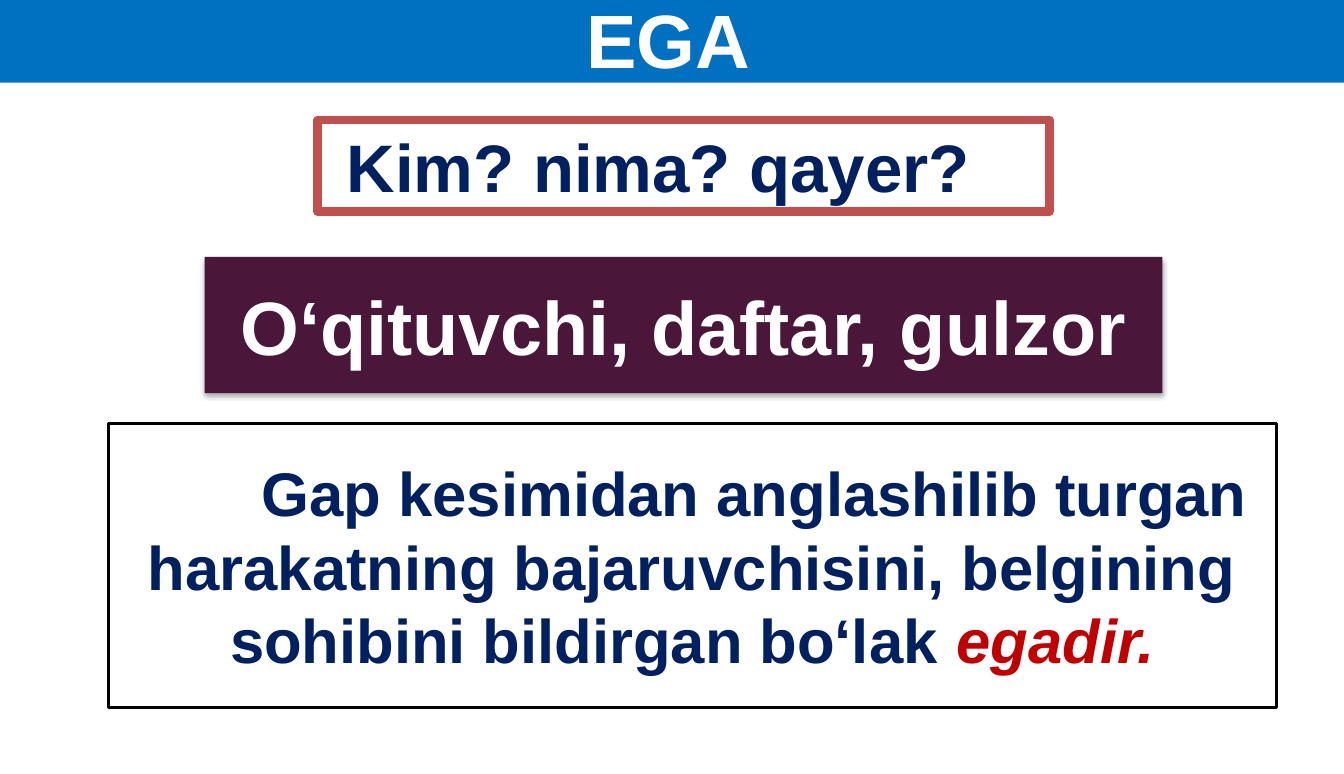
from dataclasses import dataclass

from lxml import etree
from pptx import Presentation
from pptx.dml.color import RGBColor
from pptx.enum.shapes import MSO_SHAPE
from pptx.enum.text import MSO_ANCHOR, MSO_AUTO_SIZE, PP_ALIGN
from pptx.oxml import parse_xml
from pptx.oxml.ns import nsdecls
from pptx.shapes.autoshape import Shape
from pptx.slide import Slide
from pptx.text.text import TextFrame
from pptx.util import Inches, Pt

RECTANGLE = MSO_SHAPE.RECTANGLE
TOP, MIDDLE = MSO_ANCHOR.TOP, MSO_ANCHOR.MIDDLE
LEFT, CENTER = PP_ALIGN.LEFT, PP_ALIGN.CENTER
NO_AUTOFIT = MSO_AUTO_SIZE.NONE

FONT = "Arial"
WHITE, BLACK, NAVY = "FFFFFF", "000000", "002060"
BLUE, BRICK, PLUM, RED = "0070C0", "C0504D", "4A1639", "C00000"


@dataclass(frozen=True)
class TextRun:
    text: str
    size: float
    color: str
    italic: bool = False


@dataclass(frozen=True)
class Panel:
    left: float
    top: float
    width: float
    height: float
    fill: str
    runs: tuple[TextRun, ...] = ()
    line: str | None = None
    line_width: float = 0
    anchor: MSO_ANCHOR = MIDDLE
    alignment: PP_ALIGN = CENTER
    indent: float = 0
    shadow: bool = False


BANNER = Panel(-0.02, -0.15, 13.35, 0.97, BLUE)
TITLE_RUN = TextRun("EGA", 54, WHITE)
PANELS = (
    Panel(3.15, 1.19, 7.26, 0.91, WHITE, (TextRun("Kim? nima? qayer?", 48, NAVY),),
          BRICK, 6, TOP, LEFT, 0.19),
    Panel(1.08, 4.2, 11.58, 2.82, WHITE,
          (TextRun("Gap kesimidan anglashilib turgan harakatning bajaruvchisini, "
                   "belgining sohibini bildirgan bo‘lak ", 44, NAVY),
           TextRun("egadir.", 44, RED, True)),
          BLACK, 2, indent=1.24),
    Panel(2.03, 2.55, 9.5, 1.35, PLUM,
          (TextRun("O‘qituvchi, daftar, gulzor", 54, WHITE),), shadow=True),
)


def rgb(color: str) -> RGBColor:
    return RGBColor.from_string(color)


def write_text(frame: TextFrame, runs: tuple[TextRun, ...], anchor: MSO_ANCHOR,
               alignment: PP_ALIGN, indent: float = 0) -> None:
    frame.word_wrap = True
    frame.auto_size = NO_AUTOFIT
    frame.vertical_anchor = anchor
    paragraph = frame.paragraphs[0]
    paragraph.alignment = alignment
    if indent:
        properties = paragraph._p.get_or_add_pPr()
        properties.set("marL", "0")
        properties.set("indent", str(Inches(indent)))
    for item in runs:
        run = paragraph.add_run()
        run.text = item.text
        run.font.name = FONT
        run.font.size = Pt(item.size)
        run.font.bold = True
        run.font.italic = item.italic
        run.font.color.rgb = rgb(item.color)


def add_soft_shadow(shape: Shape) -> None:
    effects = shape.element.spPr.find("{*}effectLst")
    shadow = parse_xml(
        f'<a:outerShdw {nsdecls("a")} blurRad="{Pt(3.5)}" dist="{Pt(2.2)}" '
        'dir="5400000" rotWithShape="0"/>')
    namespace = etree.QName(shadow).namespace
    color = etree.SubElement(shadow, f"{{{namespace}}}srgbClr", val=BLACK)
    etree.SubElement(color, f"{{{namespace}}}alpha", val="32000")
    effects.append(shadow)


def add_panel(slide: Slide, panel: Panel) -> Shape:
    shape = slide.shapes.add_shape(
        RECTANGLE, Inches(panel.left), Inches(panel.top),
        Inches(panel.width), Inches(panel.height))
    shape.fill.solid()
    shape.fill.fore_color.rgb = rgb(panel.fill)
    if panel.line:
        shape.line.color.rgb = rgb(panel.line)
        shape.line.width = Pt(panel.line_width)
    else:
        shape.line.fill.background()
    shape.shadow.inherit = False
    if panel.shadow:
        add_soft_shadow(shape)
    if panel.runs:
        write_text(shape.text_frame, panel.runs, panel.anchor,
                   panel.alignment, panel.indent)
    return shape


def add_title(slide: Slide) -> None:
    title = slide.shapes.title
    title.left, title.top = Inches(-0.02), Inches(-0.09)
    title.width, title.height = Inches(13.29), Inches(0.93)
    frame = title.text_frame
    frame.margin_left = frame.margin_right = frame.margin_bottom = 0
    frame.margin_top = Inches(0.02)
    write_text(frame, (TITLE_RUN,), TOP, CENTER)
    frame.paragraphs[0].space_before = Pt(1.5)
    banner = add_panel(slide, BANNER)
    title.element.addprevious(banner.element)


def main() -> None:
    presentation = Presentation()
    presentation.slide_width = Inches(13.33)
    presentation.slide_height = Inches(7.68)
    slide = presentation.slides.add_slide(presentation.slide_layouts[5])
    add_title(slide)
    for panel in PANELS:
        add_panel(slide, panel)
    presentation.save("out.pptx")


if __name__ == "__main__":
    main()
